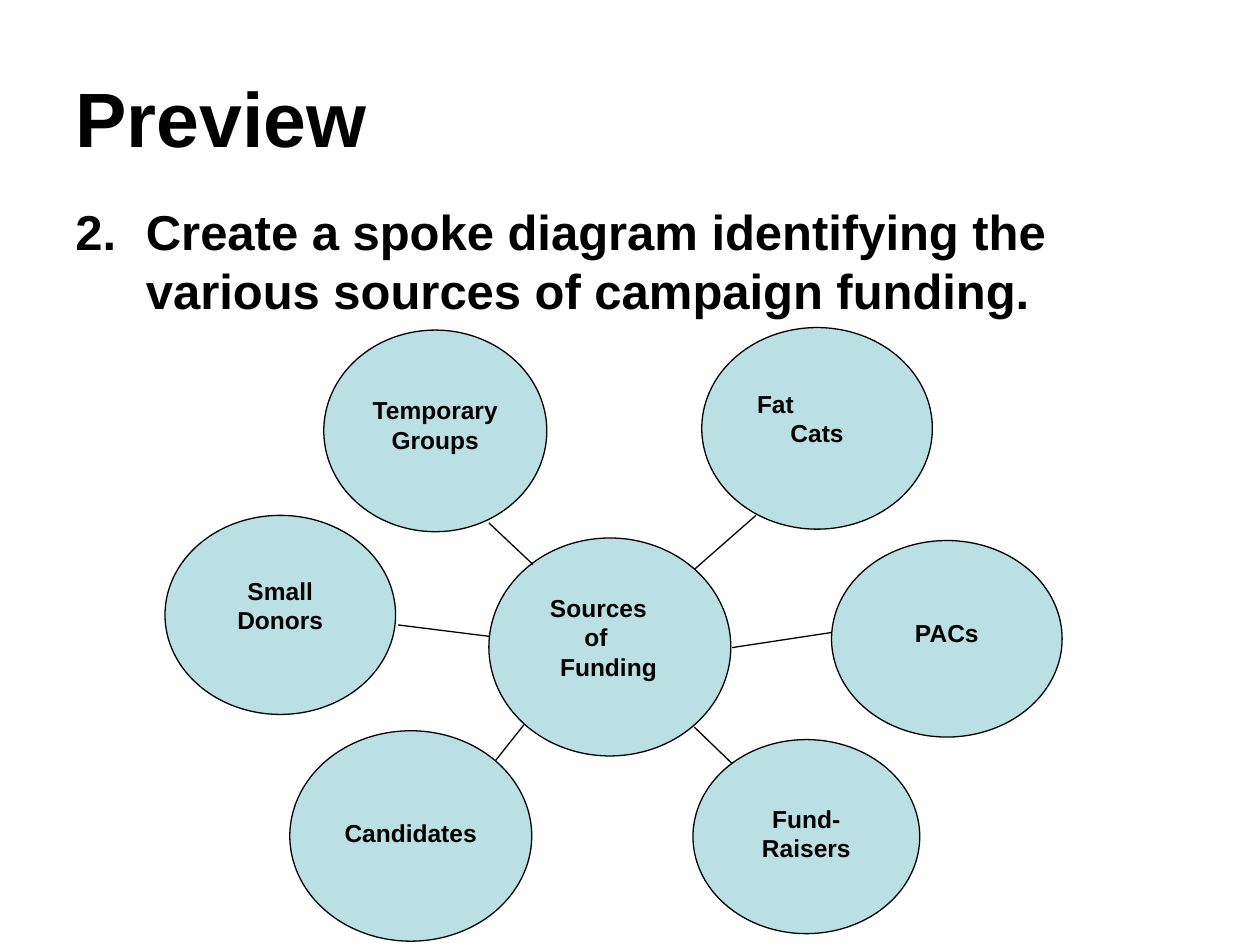
from dataclasses import dataclass

import lxml.etree
import pptx
import pptx.dml.color
import pptx.enum.shapes
import pptx.enum.text
import pptx.oxml.ns
import pptx.util

ALIGN = pptx.enum.text.PP_ALIGN
ANCHOR = pptx.enum.text.MSO_ANCHOR
COLS, ROWS = 100, 75


@dataclass(frozen=True)
class Theme:
    font: str = "Arial"
    ink: str = "000000"
    fill: str = "BBE0E3"
    title: int = 44
    body: int = 28
    label: int = 14
    line: float = 0.75


@dataclass(frozen=True)
class Node:
    text: str
    left: float
    top: float
    width: float
    height: float
    drop: float
    shifts: tuple[float, ...] = ()


@dataclass(frozen=True)
class Spoke:
    x1: float
    y1: float
    x2: float
    y2: float


THEME = Theme()
NODES = [
    Node("Sources\nof\nFunding", 38.8, 42.7, 19.2, 17.3, 1.84, (1.8, 2.2, 0.2)),
    Node("Small Donors", 13.1, 40.9, 18.3, 15.8, 2.5),
    Node("Fat\nCats", 55.7, 26, 18.3, 16, 2.5, (6.6, 0)),
    Node("Candidates", 23, 58, 19.2, 16.7, 4.5),
    Node("PACs", 66, 42.9, 18.3, 15.6, 3.84),
    Node("Temporary\nGroups", 25.7, 26.2, 17.7, 16, 2.84),
    Node("Fund- Raisers", 55, 58.7, 18, 15.4, 2.84),
]
SPOKES = [
    Spoke(38.8, 50.5, 31.6, 49.6),
    Spoke(66, 50.2, 58.1, 51.4),
    Spoke(55.1, 45.2, 60, 40.9),
    Spoke(42.3, 44.8, 38.8, 41.5),
    Spoke(55.1, 57.7, 58.1, 60.6),
    Spoke(41.6, 57.5, 39.3, 60.4),
]

deck = pptx.Presentation()
deck.slide_width = pptx.util.Inches(10)
deck.slide_height = pptx.util.Inches(7.5)
slide = deck.slides.add_slide(deck.slide_layouts[6])


def col(n: float) -> int:
    return round(deck.slide_width * n / COLS)


def row(n: float) -> int:
    return round(deck.slide_height * n / ROWS)


def color(code: str) -> pptx.dml.color.RGBColor:
    return pptx.dml.color.RGBColor.from_string(code)


def child(base, tag: str, **attrs: str):
    return lxml.etree.SubElement(base, pptx.oxml.ns.qn(tag), attrs)


def write(frame, text: str, size: int, align, anchor, drop: float = 0.5) -> None:
    frame.text = text
    frame.word_wrap = True
    frame.vertical_anchor = anchor
    frame.margin_left = frame.margin_right = col(1)
    frame.margin_top, frame.margin_bottom = row(drop), row(0.5)
    for para in frame.paragraphs:
        para.alignment = align
        for run in para.runs:
            run.font.name = THEME.font
            run.font.size = pptx.util.Pt(size)
            run.font.bold = True
            run.font.color.rgb = color(THEME.ink)


def add_text(text: str, top: float, width: float, height: float, size: int, anchor):
    box = slide.shapes.add_textbox(col(5), row(top), col(width), row(height))
    write(box.text_frame, text, size, ALIGN.LEFT, anchor)
    return box.text_frame.paragraphs[0]


def number(para, start: int, indent: float) -> None:
    props = para._p.get_or_add_pPr()
    props.set("marL", str(col(indent)))
    props.set("indent", str(-col(indent)))
    child(child(props, "a:buClr"), "a:srgbClr", val=THEME.ink)
    child(props, "a:buFont", typeface=THEME.font)
    child(props, "a:buAutoNum", type="arabicPeriod", startAt=str(start))


def add_node(node: Node) -> None:
    oval = slide.shapes.add_shape(
        pptx.enum.shapes.MSO_SHAPE.OVAL,
        col(node.left), row(node.top), col(node.width), row(node.height),
    )
    oval.shadow.inherit = False
    oval.fill.solid()
    oval.fill.fore_color.rgb = color(THEME.fill)
    oval.line.color.rgb = color(THEME.ink)
    oval.line.width = pptx.util.Pt(THEME.line)
    frame = oval.text_frame
    write(frame, node.text, THEME.label, ALIGN.CENTER, ANCHOR.TOP, node.drop)
    for para, shift in zip(frame.paragraphs, node.shifts):
        para._p.get_or_add_pPr().set("marR", str(col(shift)))


def add_spoke(spoke: Spoke) -> None:
    line = slide.shapes.add_connector(
        pptx.enum.shapes.MSO_CONNECTOR.STRAIGHT,
        col(spoke.x1), row(spoke.y1), col(spoke.x2), row(spoke.y2),
    )
    line.line.color.rgb = color(THEME.ink)
    line.line.width = pptx.util.Pt(THEME.line)
    child(line._element.spPr, "a:effectLst")


def main() -> None:
    add_text("Preview", 3, 90, 12.5, THEME.title, ANCHOR.MIDDLE)
    task = add_text(
        "Create a spoke diagram identifying the various sources of campaign funding.",
        15.5, 93.3, 49.5, THEME.body, ANCHOR.TOP,
    )
    number(task, 2, 5.6)
    for node in NODES:
        add_node(node)
    for spoke in SPOKES:
        add_spoke(spoke)
    deck.save("out.pptx")


if __name__ == "__main__":
    main()
